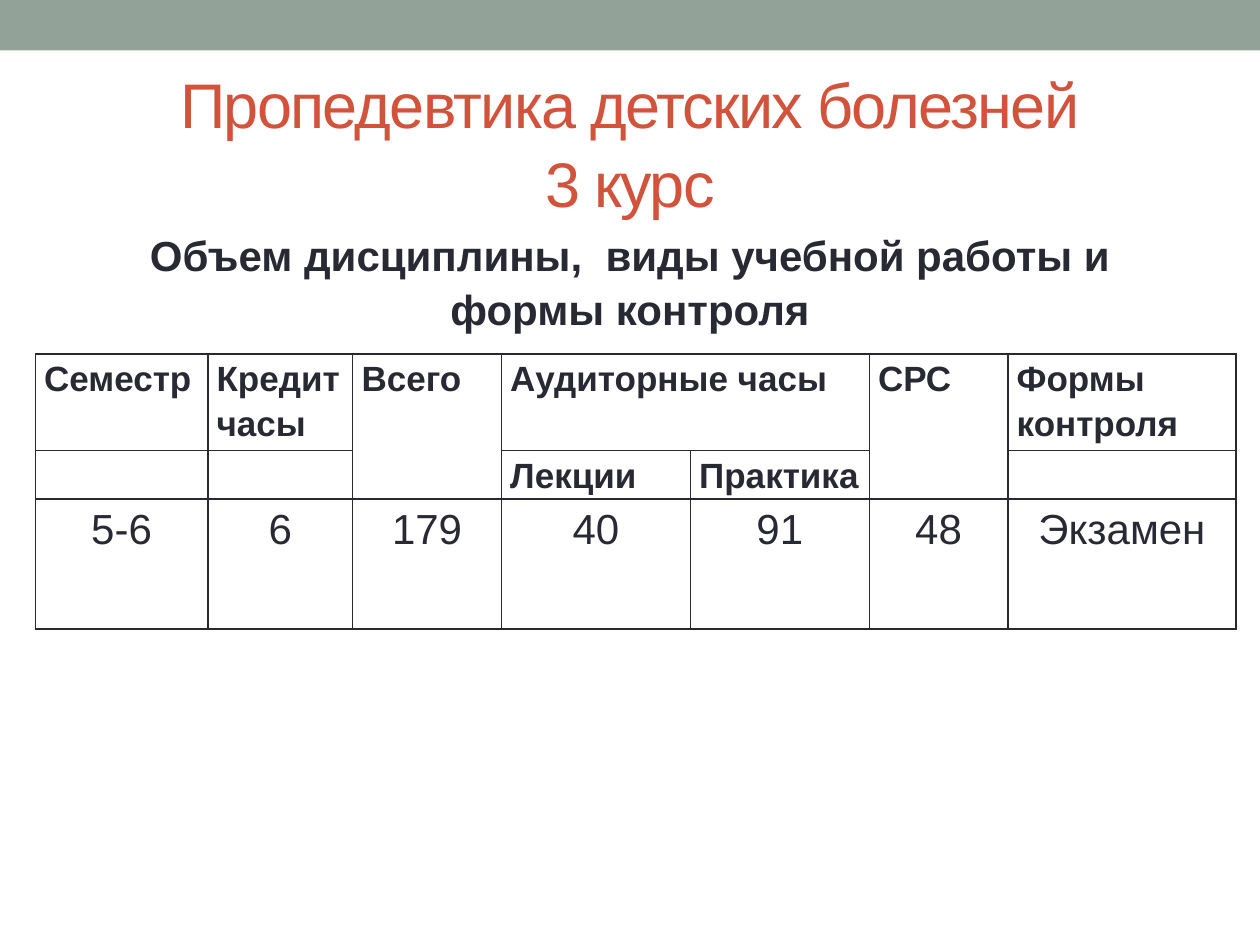
from lxml import etree
from pptx import Presentation
from pptx.dml.color import RGBColor
from pptx.enum.shapes import MSO_SHAPE
from pptx.enum.text import MSO_ANCHOR, MSO_AUTO_SIZE, PP_ALIGN
from pptx.oxml.ns import qn
from pptx.util import Inches, Pt

RECT = MSO_SHAPE.RECTANGLE
CENTER, JUSTIFY = PP_ALIGN.CENTER, PP_ALIGN.JUSTIFY
GREEN = RGBColor(0x93, 0xA2, 0x99)
RED = RGBColor(0xD2, 0x53, 0x3C)
DARK = RGBColor(0x29, 0x29, 0x34)


def style(para, size, color, bold, align, spacing):
    para.alignment = align
    para.line_spacing = spacing
    for run in para.runs:
        font = run.font
        font.name, font.size, font.bold = "Arial", Pt(size), bold
        font.color.rgb = color


def border(cell):
    """Draw a thin dark line on all four sides of the cell."""
    props = cell._tc.get_or_add_tcPr()
    for at, side in enumerate(("a:lnL", "a:lnR", "a:lnT", "a:lnB")):
        line = etree.Element(qn(side), w=str(Pt(1)))
        fill = etree.SubElement(line, qn("a:solidFill"))
        etree.SubElement(fill, qn("a:srgbClr"), val=str(DARK))
        props.insert(at, line)


prs = Presentation()
prs.slide_width, prs.slide_height = Inches(10), Inches(7.5)
slide = prs.slides.add_slide(prs.slide_layouts[5])

# Title
title = slide.shapes.title
title.left, title.top = Inches(0.5), Inches(0.58)
title.width, title.height = Inches(9), Inches(1.08)
frame = title.text_frame
frame.text = "Пропедевтика детских болезней\v3 курс"
frame.auto_size = MSO_AUTO_SIZE.NONE
frame.vertical_anchor = MSO_ANCHOR.MIDDLE
style(frame.paragraphs[0], 36, RED, False, CENTER, 1.04)
for run in frame.paragraphs[0].runs:
    run.font._element.set("spc", "-100")

# Top band
band = slide.shapes.add_shape(RECT, 0, 0, prs.slide_width, Inches(0.4))
band.shadow.inherit = False
band.fill.solid()
band.fill.fore_color.rgb = GREEN
band.line.fill.background()

# Subtitle
body = slide.shapes.add_textbox(Inches(0.5), Inches(1.75), Inches(9), Inches(1))
frame = body.text_frame
frame.word_wrap = True
frame.text = "Объем дисциплины,  виды учебной работы и формы контроля"
style(frame.paragraphs[0], 24, DARK, True, CENTER, 1.06)

# Table of hours
rows = [
    ["Семестр", "Кредит\nчасы", "Всего", "Аудиторные часы", "", "СРС", "Формы контроля"],
    ["", "", "", "Лекции", "Практика", "", ""],
    ["5-6", "6", "179", "40", "91", "48", "Экзамен"],
]
widths = [1.37, 1.15, 1.18, 1.5, 1.42, 1.1, 1.81]
heights = [0.71, 0.36, 1.03]
table = slide.shapes.add_table(
    len(rows), len(widths), Inches(0.28), Inches(2.81),
    Inches(sum(widths)), Inches(sum(heights))).table
table.first_row = table.horz_banding = False
for col, width in zip(table.columns, widths):
    col.width = Inches(width)
for row, height in zip(table.rows, heights):
    row.height = Inches(height)

for r, texts in enumerate(rows):
    head = r < 2
    for c, text in enumerate(texts):
        cell = table.cell(r, c)
        cell.margin_left = cell.margin_right = Inches(0.07)
        cell.margin_top = cell.margin_bottom = 0
        cell.fill.background()
        border(cell)
        cell.text_frame.text = text
        for para in cell.text_frame.paragraphs:
            style(para, 20 if head else 24, DARK, head,
                  JUSTIFY if head else CENTER, 1.15)

for first, last in [((0, 2), (1, 2)), ((0, 3), (0, 4)), ((0, 5), (1, 5))]:
    table.cell(*first).merge(table.cell(*last))

prs.save("out.pptx")
